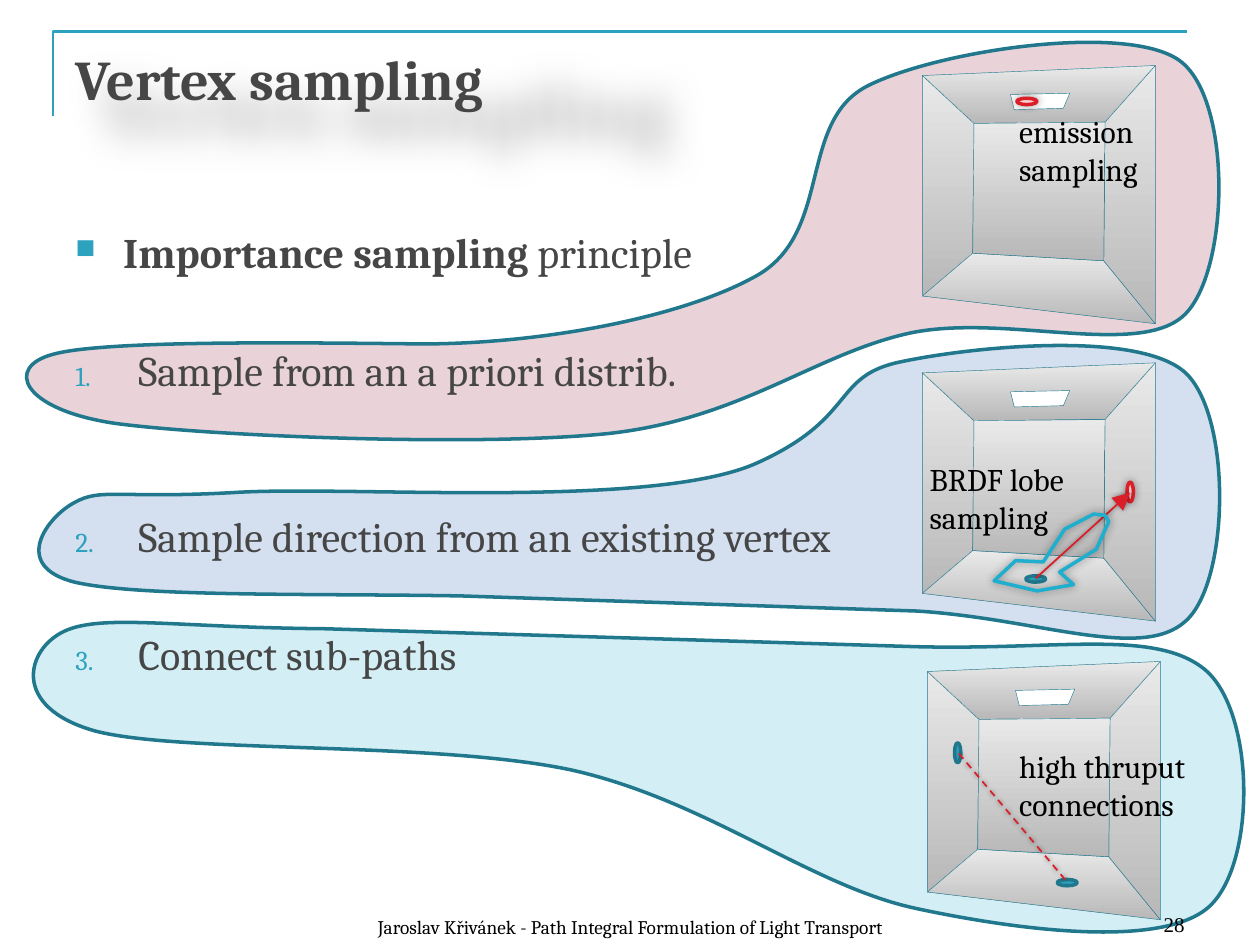
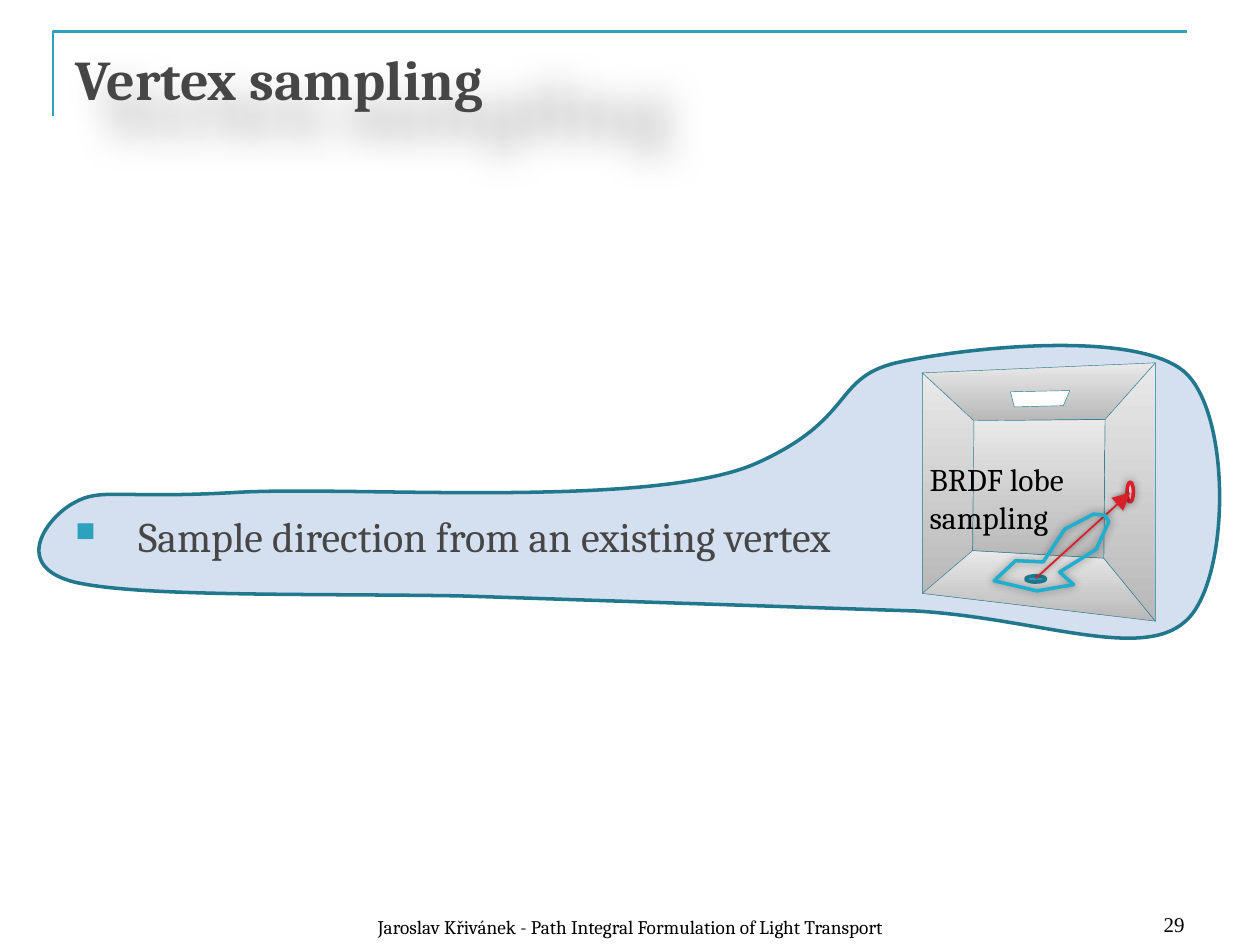
from lxml.etree import SubElement
from pptx import Presentation
from pptx.dml.color import RGBColor
from pptx.enum.dml import MSO_LINE
from pptx.enum.shapes import MSO_CONNECTOR, MSO_SHAPE
from pptx.enum.text import MSO_ANCHOR, PP_ALIGN
from pptx.oxml.ns import qn
from pptx.util import Inches, Pt

ACCENT, OUTLINE, WALL_LINE = "2DA2BF", "21788D", "227A8F"
RED, PINK, LOBE_LINE = "DA1F28", "F9D1D3", "1FAECD"
BODY, BLACK, WHITE = "464646", "000000", "FFFFFF"
WALL_DARK, WALL_LIGHT = "B8B8B8", "E9E9E9"
FONT, NUMBER_FONT = "Cambria", "Times New Roman"
TITLE = "Vertex sampling"
FOOTER = "Jaroslav Křivánek - Path Integral Formulation of Light Transport"
DIRECTION_ITEM = "Sample direction from an existing vertex"

ROOMS = [(7.32, 0.52), (7.32, 2.88), (7.36, 5.25)]
OUTER = [(0, 0.08), (1.85, 0), (1.85, 2.05), (0, 1.83)]
INNER = [(0.41, 0.46), (1.45, 0.45), (1.44, 1.55), (0.4, 1.49)]
LAMP = [(1.12, 0.34), (1.17, 0.22), (0.7, 0.23), (0.73, 0.35)]
LOBE = [(8.52, 4.64), (8.41, 4.54), (8.7, 4.36), (8.8, 4.14), (8.77, 4.09), (8.68, 4.08),
        (8.45, 4.2), (8.28, 4.46), (8.06, 4.45), (7.89, 4.61), (8.23, 4.69)]

EMISSION_BLOB = ("EAD3D8", (3.35, 2.73), [
    (2.38, 2.72, 0.84, 2.7, 0.43, 2.81), (0.03, 2.91, 0.17, 3.25, 0.91, 3.36),
    (1.64, 3.46, 3.79, 3.55, 4.84, 3.44), (5.9, 3.32, 6.48, 2.8, 7.24, 2.64),
    (8, 2.49, 9.06, 2.85, 9.41, 2.49), (9.76, 2.13, 9.78, 0.78, 9.36, 0.48),
    (8.94, 0.18, 7.45, 0.4, 6.89, 0.68), (6.33, 0.96, 6.61, 1.83, 6.02, 2.18),
    (5.43, 2.52, 4.3, 2.73, 3.35, 2.73)])
DIRECTION_BLOB = ("D4DFEF", (0.59, 4.62), [
    (1.1, 4.74, 2.49, 4.71, 3.66, 4.73), (7.28, 4.85),
    (8.24, 4.91, 9.06, 5.25, 9.41, 4.93), (9.76, 4.62, 9.78, 3.31, 9.41, 2.96),
    (9.04, 2.62, 7.73, 2.75, 7.16, 2.87), (6.6, 2.98, 6.81, 3.31, 6.02, 3.67),
    (5.2, 4.05, 2.76, 3.85, 1.85, 3.91), (0.94, 3.96, 0.8, 3.87, 0.59, 3.99),
    (0.38, 4.1, 0.08, 4.49, 0.59, 4.62)])
CONNECTION_BLOB = ("D3EEF5", (7.27, 7.21), [
    (8.11, 7.39, 9.2, 7.52, 9.58, 7.21), (9.97, 6.89, 9.97, 5.67, 9.57, 5.32),
    (9.17, 4.98, 8.37, 5.17, 7.19, 5.13), (2.57, 4.99),
    (1.39, 4.98, 0.81, 4.87, 0.51, 5.01), (0.21, 5.15, 0.08, 5.61, 0.75, 5.8),
    (1.42, 5.98, 3.44, 5.88, 4.53, 6.11), (5.61, 6.35, 6.43, 7.03, 7.27, 7.21)])


def color(value):
    return RGBColor.from_string(value)


def set_effect(shape, blur=0, opacity=0, **attributes):
    effects = SubElement(shape._element.spPr, qn("a:effectLst"))
    if blur:
        shadow = SubElement(effects, qn("a:outerShdw"), blurRad=str(Pt(blur)), **attributes)
        tint = SubElement(shadow, qn("a:srgbClr"), val=BLACK)
        SubElement(tint, qn("a:alpha"), val=str(opacity * 1000))


def set_line(shape, line_color, width):
    shape.line.color.rgb = color(line_color)
    shape.line.width = Pt(width)


def set_fill(shape, fill):
    if fill is None:
        shape.fill.background()
    elif isinstance(fill, tuple):
        shape.fill.gradient()
        shape.fill.gradient_angle = 90
        for stop, position, value in zip(shape.fill.gradient_stops, (0, 1), fill):
            stop.position = position
            stop.color.rgb = color(value)
    else:
        shape.fill.solid()
        shape.fill.fore_color.rgb = color(fill)


def add_outline(slide, points, fill, line_color, width, close=True, blur=0, opacity=0):
    scaled = [(Inches(x), Inches(y)) for x, y in points]
    builder = slide.shapes.build_freeform(*scaled[0], scale=1.0)
    builder.add_line_segments(scaled[1:], close=close)
    shape = builder.convert_to_shape()
    set_fill(shape, fill)
    set_line(shape, line_color, width)
    set_effect(shape, blur, opacity)
    return shape


def add_blob(slide, fill, start, segments):
    points = [start]
    for segment in segments:
        points += zip(segment[::2], segment[1::2])
    shape = add_outline(slide, points, fill, OUTLINE, 2)
    steps = iter(list(shape._element.iter(qn("a:lnTo"))))
    for segment in segments:
        step = next(steps)
        if len(segment) == 6:
            curve = step.getparent().makeelement(qn("a:cubicBezTo"))
            step.addprevious(curve)
            for corner in (step, next(steps), next(steps)):
                curve.append(corner[0])
                corner.getparent().remove(corner)


def add_room(slide, origin):
    walls = [[OUTER[i], OUTER[(i + 1) % 4], INNER[(i + 1) % 4], INNER[i]] for i in (0, 3, 2, 1)]
    gradient = (WALL_DARK, WALL_LIGHT)
    for panel, fill in [(wall, gradient) for wall in walls + [INNER]] + [(LAMP, WHITE)]:
        points = [(origin[0] + x, origin[1] + y) for x, y in panel]
        add_outline(slide, points, fill, WALL_LINE, 0.25)


def add_vertex(slide, left, top, rotation=0, light=False):
    shape = slide.shapes.add_shape(MSO_SHAPE.OVAL, Inches(left), Inches(top),
                                   Inches(0.16), Inches(0.05))
    shape.rotation = rotation
    set_fill(shape, PINK if light else ACCENT)
    set_line(shape, RED if light else OUTLINE, 2)
    set_effect(shape, 5 if light else 0, 40)


def add_ray(slide, start, end, dashed=False):
    ray = slide.shapes.add_connector(MSO_CONNECTOR.STRAIGHT,
                                     *[Inches(value) for value in start + end])
    set_line(ray, RED, 1)
    if dashed:
        ray.line.dash_style = MSO_LINE.DASH
    else:
        SubElement(ray.line._get_or_add_ln(), qn("a:headEnd"), type="triangle",
                   w="lg", len="lg")
    set_effect(ray, 3, 50)


def add_run(paragraph, text, size, text_color=BLACK, bold=False, font=FONT):
    run = paragraph.add_run()
    run.text = text
    run.font.name, run.font.size, run.font.bold = font, Pt(size), bold
    run.font.color.rgb = color(text_color)


def add_box(slide, left, top, width, height, wrap=True, anchor=MSO_ANCHOR.TOP):
    box = slide.shapes.add_textbox(*[Inches(value) for value in (left, top, width, height)])
    box.text_frame.word_wrap = wrap
    box.text_frame.vertical_anchor = anchor
    return box


def add_label(slide, left, top, width, lines):
    frame = add_box(slide, left, top, width, 0.71, wrap=False).text_frame
    for index, line in enumerate(lines):
        paragraph = frame.add_paragraph() if index else frame.paragraphs[0]
        add_run(paragraph, line, 18)


def add_title(slide):
    box = add_box(slide, 0.5, 0.3, 9, 1.25)
    add_run(box.text_frame.paragraphs[0], TITLE, 32, BODY, bold=True)
    set_effect(box, 22, 27, dist=str(Pt(13)), dir="2100000", algn="tl",
               sx="140000", sy="140000", rotWithShape="0")


def add_list(slide, height, items, margin_top=0.05):
    frame = add_box(slide, 0.5, 1.75, 9, height).text_frame
    frame.margin_top = Inches(margin_top)
    for index, (indent, gap, numbered, runs) in enumerate(items):
        paragraph = frame.add_paragraph() if index else frame.paragraphs[0]
        paragraph.space_before = Pt(gap)
        properties = paragraph._p.get_or_add_pPr()
        properties.set("marL", str(Inches(indent)))
        properties.set("indent", str(-Inches(indent)))
        SubElement(SubElement(properties, qn("a:buClr")), qn("a:srgbClr"), val=ACCENT)
        SubElement(properties, qn("a:buSzPct"), val="65000")
        if numbered:
            SubElement(properties, qn("a:buAutoNum"), type="arabicPeriod")
        else:
            SubElement(properties, qn("a:buChar"), char="■")
        for text, bold in runs:
            add_run(paragraph, text, 24, BODY, bold)


def add_footer(slide, number):
    for left, top, width, text, size, font, alignment in [
            (1.54, 7, 6.93, FOOTER, 11, FONT, PP_ALIGN.CENTER),
            (7.17, 6.98, 2.33, str(number), 12, NUMBER_FONT, PP_ALIGN.RIGHT)]:
        box = add_box(slide, left, top, width, 0.5, anchor=MSO_ANCHOR.BOTTOM)
        paragraph = box.text_frame.paragraphs[0]
        paragraph.alignment = alignment
        add_run(paragraph, text, size, font=font)


def add_emission_scene(slide):
    add_room(slide, ROOMS[0])
    add_vertex(slide, 8.07, 0.78, light=True)
    add_label(slide, 7.99, 0.84, 1.23, ["emission", "sampling"])


def add_direction_scene(slide):
    add_room(slide, ROOMS[1])
    add_vertex(slide, 8.14, 4.57)
    add_vertex(slide, 8.89, 3.88, 270, light=True)
    add_ray(slide, (8.97, 3.91), (8.22, 4.59))
    add_outline(slide, LOBE, None, LOBE_LINE, 2, blur=5, opacity=40)
    add_label(slide, 7.28, 3.6, 1.42, ["BRDF lobe", "sampling"])


def add_connection_scene(slide):
    add_room(slide, ROOMS[2])
    add_vertex(slide, 8.39, 6.98)
    add_vertex(slide, 7.52, 5.95, 90)
    add_ray(slide, (7.61, 5.98), (8.47, 7), dashed=True)
    add_label(slide, 7.99, 5.88, 1.62, ["high thruput", "connections"])


def start_slide(presentation, blobs):
    slide = presentation.slides.add_slide(presentation.slide_layouts[6])
    add_outline(slide, [(0.42, 0.92), (0.42, 0.25), (9.42, 0.25)], None, ACCENT, 1.5, close=False)
    for blob in blobs:
        add_blob(slide, *blob)
    return slide


def build_overview(presentation):
    slide = start_slide(presentation, [CONNECTION_BLOB, DIRECTION_BLOB, EMISSION_BLOB])
    add_title(slide)
    add_list(slide, 4.95, [
        (0.38, 0, False, [("Importance sampling", True), (" principle", False)]),
        (0.5, 38.5, True, [("Sample from an a priori distrib.", False)]),
        (0.5, 66, True, [(DIRECTION_ITEM, False)]),
        (0.5, 38.5, True, [("Connect sub-paths", False)]),
    ])
    add_emission_scene(slide)
    add_direction_scene(slide)
    add_connection_scene(slide)
    add_footer(slide, 28)


def build_direction(presentation):
    slide = start_slide(presentation, [DIRECTION_BLOB])
    add_direction_scene(slide)
    add_title(slide)
    add_list(slide, 3.18, [(0.5, 0, False, [(DIRECTION_ITEM, False)])], margin_top=2.3)
    add_footer(slide, 29)


def main():
    presentation = Presentation()
    presentation.slide_width, presentation.slide_height = Inches(10), Inches(7.5)
    build_overview(presentation)
    build_direction(presentation)
    presentation.save("out.pptx")


if __name__ == "__main__":
    main()
